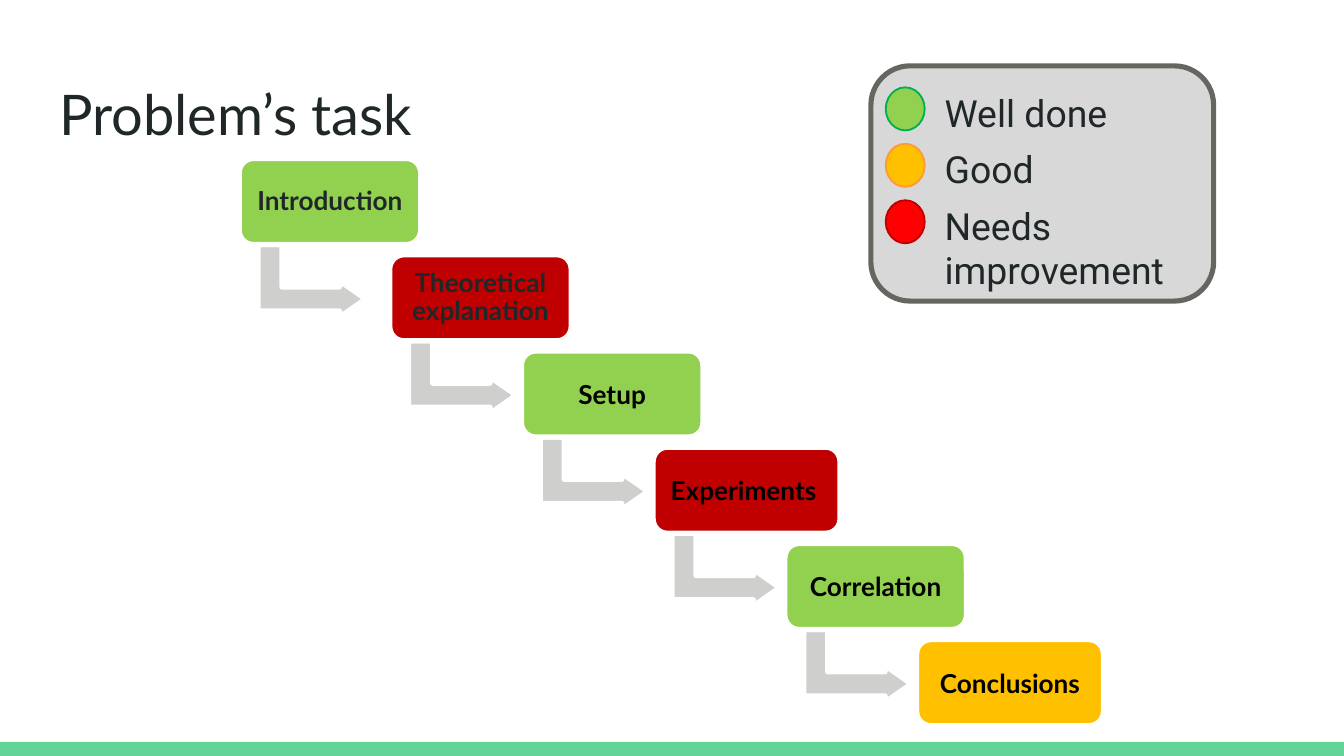
from pptx import Presentation
from pptx import util as u
from pptx.dml.color import RGBColor
from pptx.enum import shapes, text

HUES = {
    "ink": "202729", "black": "000000", "white": "FFFFFF", "bar": "63D297",
    "arrow": "CFD0CD", "green": "92D050", "amber": "FFC000", "red": "FF0000",
    "dark": "C00000", "panel": "D8D8D8", "frame": "666661",
    "leaf": "00B050", "peach": "FF9933",
}
TITLE = "Problem’s task"
LEFT, MID = text.PP_ALIGN.LEFT, text.PP_ALIGN.CENTER
STEPS = [
    ("Introduction", "green", "ink", 1.35, MID, 0.9),
    ("Theoretical explanation", "dark", "ink", 1.35, MID, 0.9),
    ("Setup", "green", "black", 1.35, MID, 1),
    ("Experiments", "dark", "black", 1.39, LEFT, 1),
    ("Correlation", "green", "black", 1.35, MID, 1),
    ("Conclusions", "amber", "black", 1.39, MID, 1),
]
LEGEND = [
    ("Well done", "green", "leaf", 1.49, 0.34),
    ("Good", "amber", "peach", 1.49, 0.34),
    ("Needs improvement", "red", "dark", 2.06, 0.59),
]
KIND = shapes.MSO_SHAPE


def hue(name):
    return RGBColor.from_string(HUES[name])


def place(*box):
    return [u.Inches(n) for n in box]


def draw(host, kind, box, fill, line=None, width=2.75):
    item = host.shapes.add_shape(kind, *place(*box))
    item.shadow.inherit = False
    item.fill.solid()
    item.fill.fore_color.rgb = hue(fill)
    if line:
        item.line.color.rgb = hue(line)
        item.line.width = u.Pt(width)
    else:
        item.line.fill.background()
    return item


def write(item, words, size, face, ink, pad, anchor, align=LEFT, bold=False, gap=None):
    frame = item.text_frame
    frame.word_wrap = True
    frame.auto_size = text.MSO_AUTO_SIZE.NONE
    frame.vertical_anchor = anchor
    frame.margin_left = frame.margin_right = u.Inches(0.1)
    frame.margin_top = frame.margin_bottom = u.Inches(pad)
    frame.text = words
    para = frame.paragraphs[0]
    para.alignment = align
    if gap:
        para.line_spacing = gap
    font = para.font
    font.size, font.name, font.bold = u.Pt(size), face, bold
    font.color.rgb = hue(ink)


deck = Presentation()
deck.slide_width = u.Inches(10)
deck.slide_height = deck.slide_width * 9 // 16
slide = deck.slides.add_slide(deck.slide_layouts[5])
TOP, MIDDLE = text.MSO_ANCHOR.TOP, text.MSO_ANCHOR.MIDDLE

draw(slide, KIND.RECTANGLE, (0, 5.52, 10, 0.11), "bar")
title = slide.shapes.title
title.left, title.top, title.width, title.height = place(0.34, 0.49, 9.32, 0.63)
write(title, TITLE, 30, "Lato", "ink", 0.1, TOP)

stairs = slide.shapes.add_group_shape()
rise = 3.58 / (len(STEPS) - 1)
for i, (words, fill, ink, wide, align, gap) in enumerate(STEPS):
    x = 1.92 + 0.98 * i if i else 1.78
    y = 1.18 + rise * i
    if i < len(STEPS) - 1:
        arrow = draw(stairs, KIND.BENT_UP_ARROW, (x + 0.27, y + 0.51, 0.54, 0.8), "arrow", "white")
        arrow.rotation = 90
        for n, part in enumerate((0.33, 0.25, 0.36)):
            arrow.adjustments[n] = part
    card = draw(stairs, KIND.ROUNDED_RECTANGLE, (x, y, wide, 0.64), fill, "white")
    write(card, words, 14, "Lato", ink, 0.1, MIDDLE, align, True, gap)

key = slide.shapes.add_group_shape()
draw(key, KIND.ROUNDED_RECTANGLE, (6.48, 0.49, 2.55, 1.75), "panel", "frame")
for i, (words, fill, line, wide, high) in enumerate(LEGEND):
    step = 0.42 * i
    draw(key, KIND.OVAL, (6.59, 0.65 + step, 0.29, 0.32), fill, line, 1)
    label = key.shapes.add_textbox(*place(6.93, 0.62 + step, wide, high))
    write(label, words, 20, "Roboto", "ink", 0.05, TOP)

deck.save("out.pptx")
